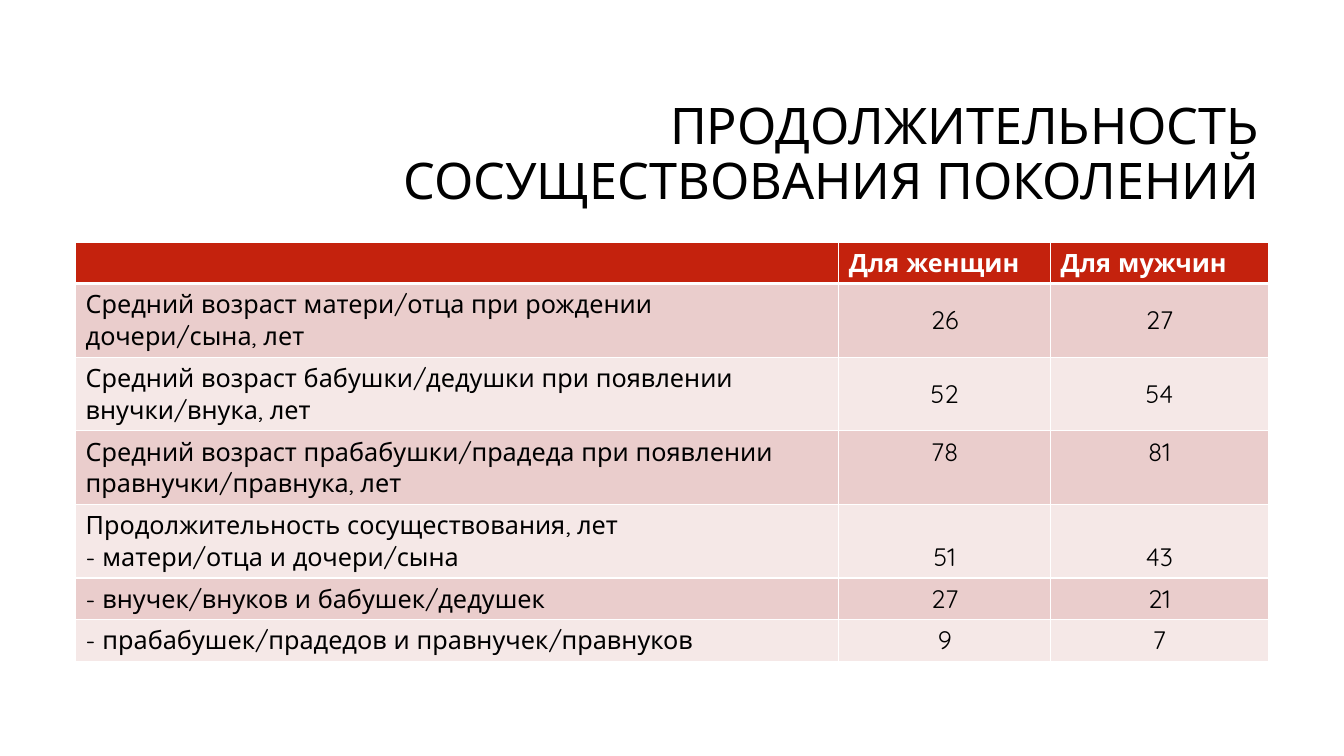
from lxml import etree
from pptx import Presentation
from pptx.dml.color import RGBColor
from pptx.enum.text import MSO_ANCHOR, PP_ALIGN
from pptx.oxml.ns import qn
from pptx.util import Inches, Pt

TOP, MIDDLE, BOTTOM = MSO_ANCHOR.TOP, MSO_ANCHOR.MIDDLE, MSO_ANCHOR.BOTTOM
LEFT, CENTER, RIGHT = PP_ALIGN.LEFT, PP_ALIGN.CENTER, PP_ALIGN.RIGHT

# Content
TITLE = "ПРОДОЛЖИТЕЛЬНОСТЬ СОСУЩЕСТВОВАНИЯ ПОКОЛЕНИЙ"
HEADER = ("", "Для женщин", "Для мужчин")
# label, women, men, anchor of the values, lines of text
ROWS = [
    ("Средний возраст матери/отца при рождении дочери/сына, лет", "26", "27", MIDDLE, 2),
    ("Средний возраст бабушки/дедушки при появлении внучки/внука, лет", "52", "54", MIDDLE, 2),
    ("Средний возраст прабабушки/прадеда при появлении правнучки/правнука, лет", "78", "81", TOP, 2),
    ("Продолжительность сосуществования, лет\n- матери/отца и дочери/сына", "51", "43", BOTTOM, 2),
    ("- внучек/внуков и бабушек/дедушек", "27", "21", MIDDLE, 1),
    ("- прабабушек/прадедов и правнучек/правнуков", "9", "7", MIDDLE, 1),
]

# Style
FONT = "Quicksand"
COLORS = {"text": "000000", "white": "FFFFFF", "header": "C4220D",
          "odd": "EACDCC", "even": "F5E8E7"}
COLUMN_WIDTHS = (7.57, 2.1, 2.16)
ROW_HEIGHTS = {1: 0.41, 2: 0.73}


def set_font(paragraph, size, color, bold=False):
    font = paragraph.font
    font.name, font.size, font.bold = FONT, Pt(size), bold
    font.color.rgb = RGBColor.from_string(COLORS[color])


def set_borders(cell, top, bottom):
    properties = cell._tc.get_or_add_tcPr()
    for side, width in (("L", 1), ("R", 1), ("T", top), ("B", bottom)):
        line = etree.SubElement(properties, qn(f"a:ln{side}"), w=str(Pt(width)))
        fill = etree.SubElement(line, qn("a:solidFill"))
        etree.SubElement(fill, qn("a:srgbClr"), val=COLORS["white"])


def fill_cell(cell, text, fill, color="text", bold=False, align=LEFT, anchor=TOP,
              top=1, bottom=1):
    set_borders(cell, top, bottom)
    cell.fill.solid()
    cell.fill.fore_color.rgb = RGBColor.from_string(COLORS[fill])
    cell.vertical_anchor = anchor
    cell.text = text
    for paragraph in cell.text_frame.paragraphs:
        paragraph.alignment = align
        set_font(paragraph, 18, color, bold)


presentation = Presentation()
presentation.slide_width, presentation.slide_height = Inches(13.33), Inches(7.5)
slide = presentation.slides.add_slide(presentation.slide_layouts[5])

# Title
title = slide.shapes.title
title.left, title.top = Inches(3.17), Inches(0.84)
title.width, title.height = Inches(9.42), Inches(1.41)
title.text_frame.text = TITLE
title.text_frame.word_wrap = True
title.text_frame.vertical_anchor = MIDDLE
title_paragraph = title.text_frame.paragraphs[0]
title_paragraph.alignment = RIGHT
title_paragraph.line_spacing = 0.9
set_font(title_paragraph, 36, "text")

# Table
heights = [ROW_HEIGHTS[1]] + [ROW_HEIGHTS[row[-1]] for row in ROWS]
table = slide.shapes.add_table(
    len(heights), len(COLUMN_WIDTHS), Inches(0.75), Inches(2.4),
    Inches(sum(COLUMN_WIDTHS)), Inches(sum(heights))).table
for column, width in zip(table.columns, COLUMN_WIDTHS):
    column.width = Inches(width)
for table_row, height in zip(table.rows, heights):
    table_row.height = Inches(height)

for column_index, text in enumerate(HEADER):
    fill_cell(table.cell(0, column_index), text, "header", "white", bold=True, bottom=3)

for row_index, (label, women, men, anchor, _) in enumerate(ROWS, start=1):
    band = "odd" if row_index % 2 else "even"
    top = 3 if row_index == 1 else 1
    fill_cell(table.cell(row_index, 0), label, band, top=top)
    for column_index, value in enumerate((women, men), start=1):
        fill_cell(table.cell(row_index, column_index), value, band,
                  align=CENTER, anchor=anchor, top=top)

presentation.save("out.pptx")
